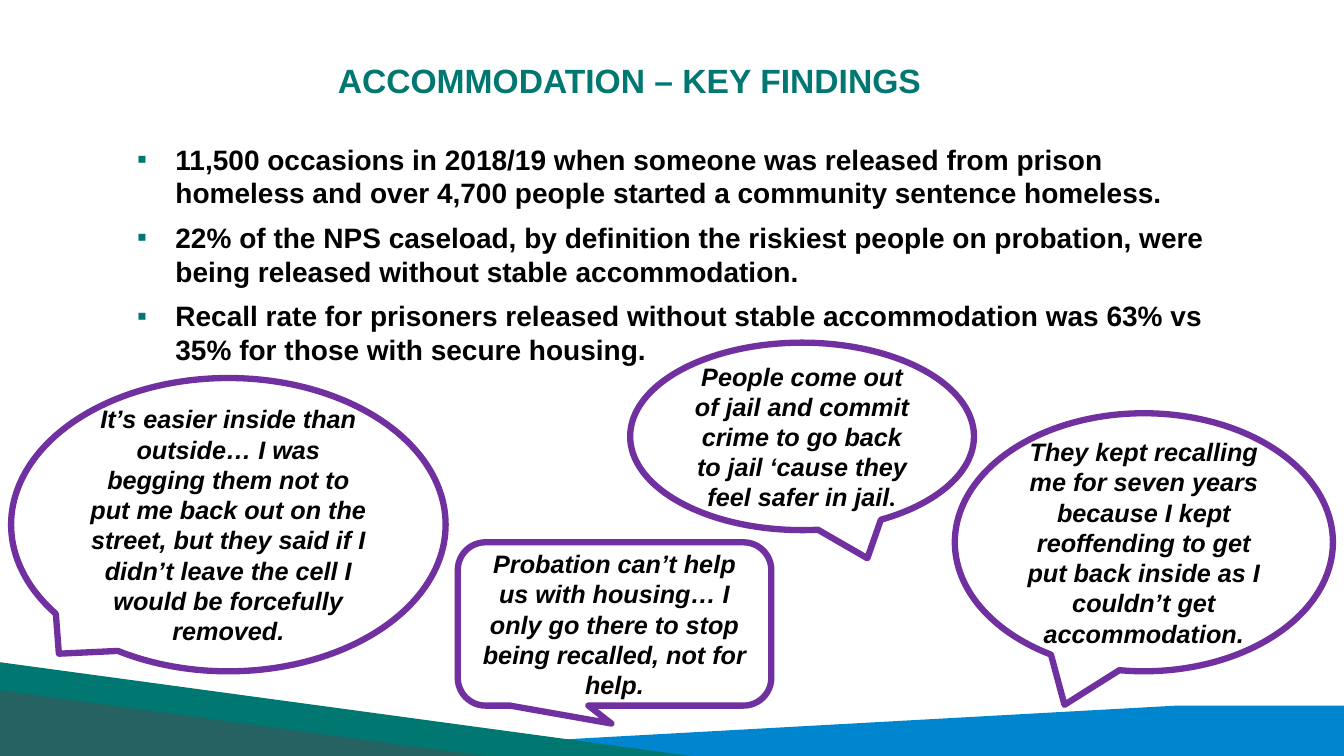
from dataclasses import dataclass

from lxml import etree
from pptx import Presentation
from pptx.dml.color import RGBColor
from pptx.enum.shapes import MSO_SHAPE
from pptx.enum.text import MSO_ANCHOR, MSO_AUTO_SIZE, PP_ALIGN
from pptx.oxml.ns import qn
from pptx.util import Inches, Pt

TRIANGLE = MSO_SHAPE.RIGHT_TRIANGLE
ELLIPSE_CALLOUT = MSO_SHAPE.OVAL_CALLOUT
ROUNDED_CALLOUT = MSO_SHAPE.ROUNDED_RECTANGULAR_CALLOUT
MIDDLE, TOP = MSO_ANCHOR.MIDDLE, MSO_ANCHOR.TOP
LEFT, CENTER = PP_ALIGN.LEFT, PP_ALIGN.CENTER
NO_AUTOFIT = MSO_AUTO_SIZE.NONE


@dataclass(frozen=True)
class Theme:
    teal: str = "007770"
    blue: str = "0085CF"
    grey: str = "4D4E53"
    purple: str = "7030A0"
    black: str = "000000"
    font: str = "Arial"
    accent_font: str = "Roboto"
    title_size: int = 24
    body_size: int = 20
    quote_size: int = 18
    outline: float = 4.5


THEME = Theme()
SLIDE_WIDTH, SLIDE_HEIGHT = 13.33, 7.5

TITLE = "ACCOMMODATION – KEY FINDINGS"
FINDINGS = [
    "11,500 occasions in 2018/19 when someone was released from prison "
    "homeless and over 4,700 people started a community sentence homeless.",
    "22% of the NPS caseload, by definition the riskiest people on probation, "
    "were being released without stable accommodation.",
    "Recall rate for prisoners released without stable accommodation was "
    "63% vs 35% for those with secure housing.",
]

# Each quote: preset, box, adjustments, text runs with their fonts
QUOTES = [
    (ELLIPSE_CALLOUT, (9.47, 4.1, 3.75, 2.56), (-0.21, 0.63), [
        ("They kept recalling me for seven years because I kept reoffending "
         "to get put back inside as I couldn’t get accommodation.", THEME.font)]),
    (ROUNDED_CALLOUT, (4.54, 5.38, 3.11, 1.62), (-0.01, 0.61, 0.17), [
        ("Probation can’t help us with housing… I only go there to stop "
         "being recalled, not for help.", THEME.font)]),
    (ELLIPSE_CALLOUT, (6.25, 3.4, 3.41, 1.86), (0.19, 0.65), [
        ("People come out of jail and commit crime to go back to jail "
         "‘cause they feel safer in jail", THEME.font),
        (".", THEME.accent_font)]),
    (ELLIPSE_CALLOUT, (0.11, 3.75, 4.31, 2.91), (-0.39, 0.44), [
        ("It’s easier inside than outside… I was begging them not to put me "
         "back out on the street, but they said if I didn’t leave the cell "
         "I would be forcefully removed.", THEME.font)]),
]


def write_text(paragraph, text, size, color=THEME.black, font=THEME.font,
               italic=False, align=LEFT):
    paragraph.alignment = align
    run = paragraph.add_run()
    run.text = text
    run.font.name = font
    run.font.size = Pt(size)
    run.font.bold = True
    run.font.italic = italic
    run.font.color.rgb = RGBColor.from_string(color)


def set_frame(shape, anchor):
    frame = shape.text_frame
    frame.word_wrap = True
    frame.auto_size = NO_AUTOFIT
    frame.vertical_anchor = anchor
    return frame


def place(shape, box):
    shape.left, shape.top, shape.width, shape.height = map(Inches, box)


def fill_plain(shape, color, opacity=100):
    shape.shadow.inherit = False
    shape.fill.solid()
    shape.fill.fore_color.rgb = RGBColor.from_string(color)
    shape.line.fill.background()
    if opacity < 100:
        color_element = shape._element.spPr.find(qn("a:solidFill"))[0]
        etree.SubElement(color_element, qn("a:alpha"), val=str(opacity * 1000))


def add_bullet(paragraph, indent):
    properties = paragraph._p.get_or_add_pPr()
    properties.set("marL", str(Inches(indent)))
    properties.set("indent", str(-Inches(indent)))
    bullet_color = etree.SubElement(properties, qn("a:buClr"))
    etree.SubElement(bullet_color, qn("a:srgbClr"), val=THEME.teal)
    etree.SubElement(properties, qn("a:buFont"), typeface=THEME.font)
    etree.SubElement(properties, qn("a:buChar"), char="▪")


def draw_footer(slide, box):
    left, top, width, height = box
    right, bottom = left + width, top + height

    # Blue band rising to the right
    band_top = bottom - 0.5
    outline = [(left + 2.62, bottom), (left + 11.68, band_top),
               (right, band_top), (right, bottom)]
    points = [(Inches(x), Inches(y)) for x, y in outline]
    builder = slide.shapes.build_freeform(*points[0])
    builder.add_line_segments(points[1:], close=True)
    fill_plain(builder.convert_to_shape(), THEME.blue)

    # Triangles in the left corner
    for wide, high, color, opacity in ((6.85, 0.93, THEME.teal, 100),
                                       (4.79, 0.65, THEME.grey, 50)):
        triangle = slide.shapes.add_shape(
            TRIANGLE, *map(Inches, (left, bottom - high, wide, high)))
        fill_plain(triangle, color, opacity)


def draw_title(slide, box):
    title = slide.shapes.title
    place(title, box)
    frame = set_frame(title, MIDDLE)
    write_text(frame.paragraphs[0], TITLE, THEME.title_size, color=THEME.teal)


def draw_findings(slide, box):
    body = slide.placeholders[1]
    place(body, box)
    frame = set_frame(body, TOP)
    for index, finding in enumerate(FINDINGS):
        paragraph = frame.add_paragraph() if index else frame.paragraphs[0]
        add_bullet(paragraph, 0.38)
        paragraph.space_before = Pt(8 if index else 0)
        write_text(paragraph, finding, THEME.body_size)


def draw_quote(slide, preset, box, adjustments, runs):
    callout = slide.shapes.add_shape(preset, *map(Inches, box))
    for index, value in enumerate(adjustments):
        callout.adjustments[index] = value
    callout.shadow.inherit = False
    callout.fill.background()
    callout.line.color.rgb = RGBColor.from_string(THEME.purple)
    callout.line.width = Pt(THEME.outline)
    paragraph = set_frame(callout, MIDDLE).paragraphs[0]
    for text, font in runs:
        write_text(paragraph, text, THEME.quote_size, font=font,
                   italic=True, align=CENTER)


def main():
    presentation = Presentation()
    presentation.slide_width = Inches(SLIDE_WIDTH)
    presentation.slide_height = Inches(SLIDE_HEIGHT)
    slide = presentation.slides.add_slide(presentation.slide_layouts[1])
    draw_footer(slide, (0, 6.57, SLIDE_WIDTH, 0.93))
    draw_title(slide, (3.25, 0.49, 8.65, 0.6))
    draw_findings(slide, (1.26, 1.36, 11.05, 2.39))
    for quote in QUOTES:
        draw_quote(slide, *quote)
    presentation.save("out.pptx")


if __name__ == "__main__":
    main()
